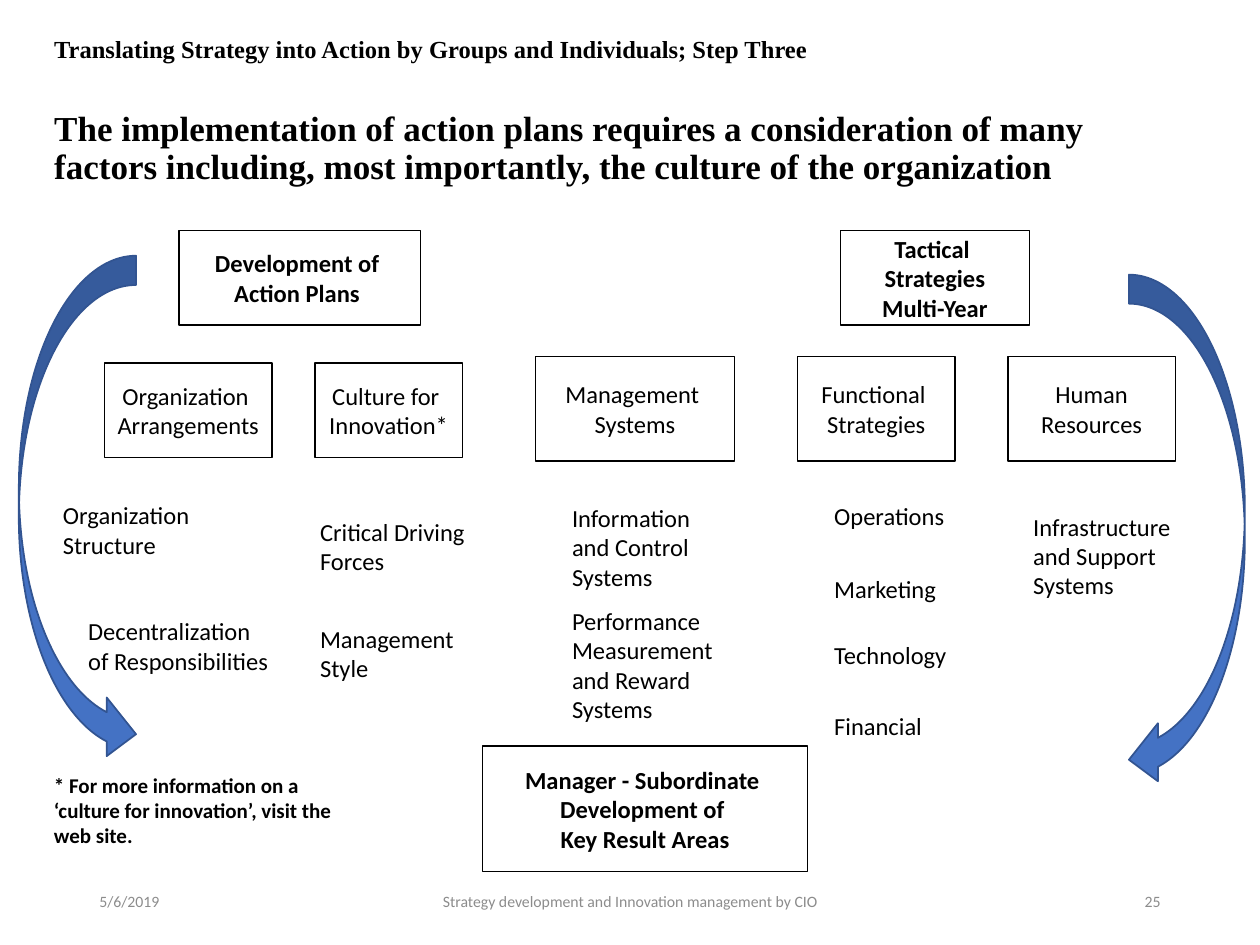
from pptx import Presentation
from pptx.dml.color import RGBColor
from pptx.enum.shapes import MSO_SHAPE
from pptx.enum.text import MSO_ANCHOR, MSO_AUTO_SIZE, PP_ALIGN
from pptx.util import Inches, Pt

LEFT, CENTER, RIGHT = PP_ALIGN.LEFT, PP_ALIGN.CENTER, PP_ALIGN.RIGHT
TOP, MIDDLE = MSO_ANCHOR.TOP, MSO_ANCHOR.MIDDLE
NO_AUTOFIT = MSO_AUTO_SIZE.NONE
RECTANGLE = MSO_SHAPE.RECTANGLE
CURVED_LEFT, CURVED_RIGHT = MSO_SHAPE.CURVED_LEFT_ARROW, MSO_SHAPE.CURVED_RIGHT_ARROW

COLORS = {"ink": "000000", "footer": "8C8C8C", "arrow": "4472C4", "arrow_edge": "325491"}
BODY_FONT, TITLE_FONT = "Calibri", "Times New Roman"
WIDE_INSETS = (0.12, 0.06)
PLAIN_INSETS = (0.1, 0.05)

STEP = "Translating Strategy into Action by Groups and Individuals; Step Three"
HEADLINE = ("The implementation of action plans requires a consideration of many factors "
            "including, most importantly, the culture of the organization")

STAGES = [
    (["Development of ", "Action Plans "], (1.42, 1.83, 1.92, 0.75)),
    (["Tactical ", "Strategies", "Multi-Year"], (6.67, 1.83, 1.5, 0.75)),
    (["Manager - Subordinate ", "Development of ", "Key Result Areas"], (3.83, 5.92, 2.58, 1)),
]

FACTORS = [
    (["Organization ", "Arrangements"], (0.83, 2.88, 1.33, 0.75), [
        ("Organization Structure", (0.38, 3.91, 1.5, 0.94)),
        ("Decentralization of Responsibilities", (0.58, 4.83, 1.67, 0.82))]),
    (["Culture for ", "Innovation*"], (2.5, 2.88, 1.17, 0.75), [
        ("Critical Driving Forces", (2.42, 4.04, 1.58, 0.59)),
        ("Management Style", (2.42, 4.89, 1.5, 0.61))]),
    (["Management ", "Systems"], (4.25, 2.83, 1.58, 0.83), [
        ("Information and Control Systems", (4.42, 3.93, 1.5, 0.82)),
        ("Performance Measurement and Reward Systems", (4.42, 4.75, 1.5, 1.06))]),
    (["Functional ", "Strategies"], (6.33, 2.83, 1.25, 0.83), [
        ("Operations", (6.5, 3.92, 1.25, 0.36)),
        ("Marketing", (6.5, 4.5, 1.33, 0.36)),
        ("Technology", (6.5, 5.02, 1.25, 0.35)),
        ("Financial", (6.5, 5.58, 1.08, 0.36))]),
    (["Human", "Resources"], (8, 2.83, 1.33, 0.83), [
        ("Infrastructure and Support Systems", (8.08, 4, 1.58, 1.18))]),
]

NOTE = "* For more information on a ‘culture for innovation’, visit the web site."
NOTE_AREA = (0.33, 6.08, 2.42, 0.71)
FOOTERS = [
    ("5/6/2019", 0.69, 2.25, LEFT),
    ("Strategy development and Innovation management by CIO", 3.31, 3.38, CENTER),
    ("25", 7.06, 2.25, RIGHT),
]
ARROWS = [(CURVED_LEFT, (8.96, 2.18, 0.92, 4.08)), (CURVED_RIGHT, (0.15, 2.03, 0.93, 4.03))]


def color(name):
    return RGBColor.from_string(COLORS[name])


def inches(area):
    return [Inches(length) for length in area]


def add_words(paragraph, words, size, font=BODY_FONT, bold=False, ink="ink"):
    run = paragraph.add_run()
    run.text = words
    run.font.name = font
    run.font.size = Pt(size)
    run.font.bold = bold
    run.font.color.rgb = color(ink)


def fill_frame(frame, lines, size, align=LEFT, anchor=TOP, insets=PLAIN_INSETS, wrap=True, **style):
    frame.word_wrap = wrap
    frame.vertical_anchor = anchor
    frame.margin_left = frame.margin_right = Inches(insets[0])
    frame.margin_top = frame.margin_bottom = Inches(insets[1])
    for index, line in enumerate(lines):
        paragraph = frame.add_paragraph() if index else frame.paragraphs[0]
        paragraph.alignment = align
        add_words(paragraph, line, size, **style)


def add_box(slide, lines, area, bold=False):
    box = slide.shapes.add_shape(RECTANGLE, *inches(area))
    box.shadow.inherit = False
    box.fill.background()
    box.line.color.rgb = color("ink")
    box.line.width = Pt(0.75)
    fill_frame(box.text_frame, lines, 14, CENTER, MIDDLE, WIDE_INSETS, wrap=False, bold=bold)


def add_label(slide, words, area, size, **style):
    label = slide.shapes.add_textbox(*inches(area))
    fill_frame(label.text_frame, [words], size, **style)


def add_arrow(slide, kind, area):
    arrow = slide.shapes.add_shape(kind, *inches(area))
    arrow.shadow.inherit = False
    arrow.fill.solid()
    arrow.fill.fore_color.rgb = color("arrow")
    arrow.line.color.rgb = color("arrow_edge")
    arrow.line.width = Pt(1)


def set_title(slide):
    title = slide.shapes.title
    title.left, title.top, title.width, title.height = inches((0.33, 0.17, 8.5, 1.08))
    frame = title.text_frame
    frame.auto_size = NO_AUTOFIT
    frame.word_wrap = True
    frame.vertical_anchor = TOP
    frame.margin_left = frame.margin_right = Inches(0.1)
    frame.margin_top = Inches(0.13)
    frame.margin_bottom = Inches(0)
    for paragraph, words, size, gap in (
        (frame.paragraphs[0], STEP, 14, 0),
        (frame.add_paragraph(), HEADLINE, 20, 27),
    ):
        paragraph.alignment = LEFT
        paragraph.line_spacing = 0.9
        paragraph.space_before = Pt(gap)
        add_words(paragraph, words, size, TITLE_FONT, True)


def main():
    deck = Presentation()
    deck.slide_width, deck.slide_height = Inches(10), Inches(7.5)
    slide = deck.slides.add_slide(deck.slide_layouts[5])
    set_title(slide)
    for words, left, width, align in FOOTERS:
        add_label(slide, words, (left, 6.95, width, 0.4), 9, align=align, anchor=MIDDLE, ink="footer")
    for lines, area in STAGES:
        add_box(slide, lines, area, bold=True)
    for heading, area, topics in FACTORS:
        add_box(slide, heading, area)
        for topic, topic_area in topics:
            add_label(slide, topic, topic_area, 14, insets=WIDE_INSETS)
    add_label(slide, NOTE, NOTE_AREA, 12, bold=True)
    for kind, area in ARROWS:
        add_arrow(slide, kind, area)
    deck.save("out.pptx")


if __name__ == "__main__":
    main()
